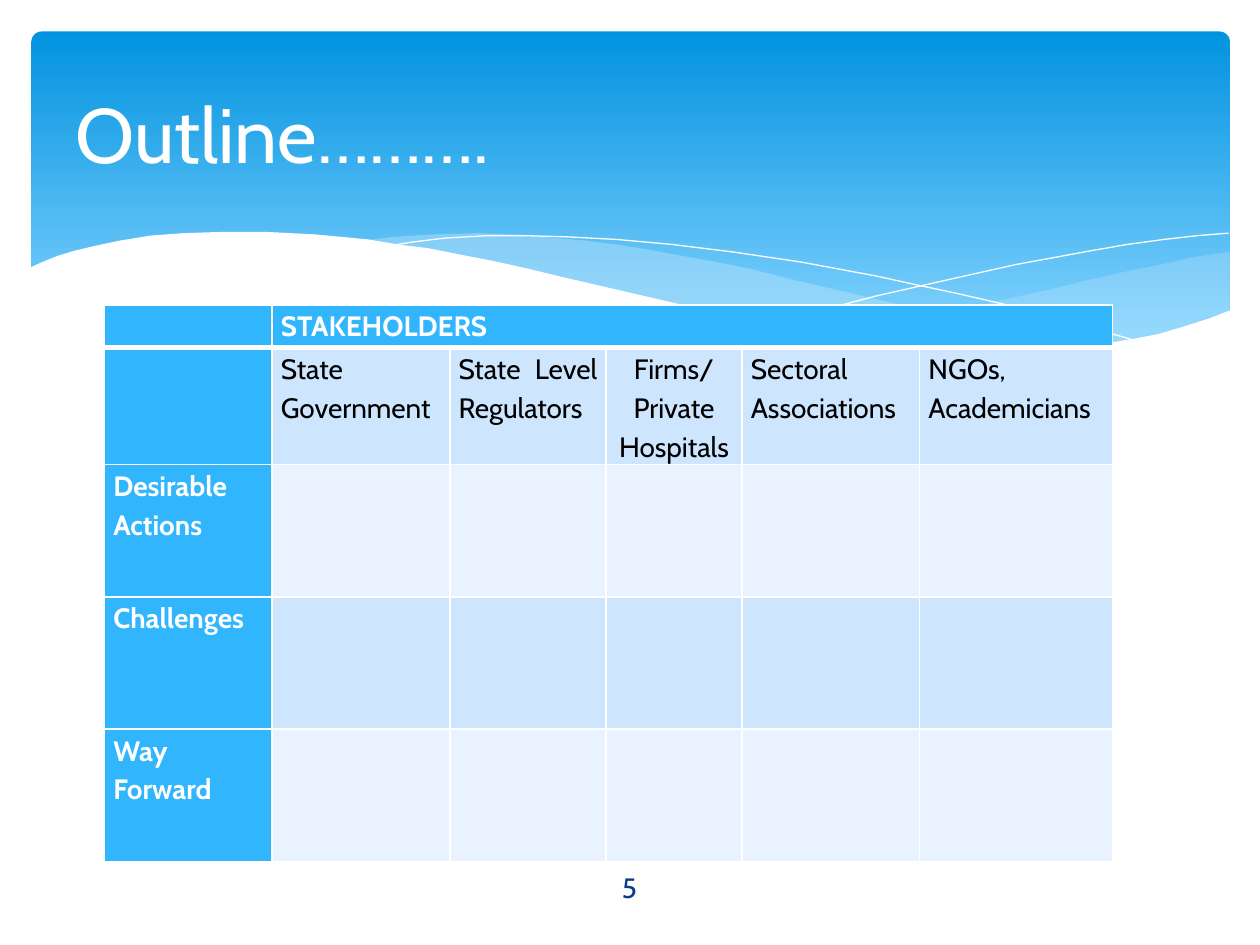
from lxml.etree import SubElement
from pptx import Presentation
from pptx.dml.color import RGBColor
from pptx.enum.shapes import MSO_SHAPE
from pptx.enum.text import MSO_ANCHOR, PP_ALIGN
from pptx.oxml.ns import qn
from pptx.util import Emu, Pt

PX = 9144  # EMU in one px, 100 px to the inch
WHITE, BLACK, NAVY = "FFFFFF", "000000", "073E87"
SKY, PALE, PALER, MIST = "31B6FD", "CEE5FE", "E8F3FF", "C6E7FC"
BANNER_TOP, BANNER_BOTTOM = "0293E0", "83D3FE"

RIGHT_SWELL = [
    (975, 200), (948, 204), (921, 210), (891, 216), (861, 223), (832, 230),
    (779, 242), (729, 253), (683, 262), (661, 265), (691, 269), (719, 272),
    (745, 275), (769, 277), (803, 278), (835, 277), (863, 275), (889, 272),
    (913, 267), (935, 262), (949, 257), (963, 252), (976, 247), (976, 200)]
MIDDLE_SWELL = [
    (893, 273), (866, 269), (837, 265), (807, 260), (775, 254), (741, 247),
    (706, 240), (668, 231), (629, 222), (598, 214), (569, 208), (541, 203),
    (514, 198), (489, 194), (465, 191), (442, 189), (420, 187), (399, 186),
    (380, 185), (344, 186), (313, 188), (286, 191), (323, 196), (362, 203),
    (404, 211), (449, 222), (491, 232), (530, 240), (566, 248), (601, 255),
    (634, 261), (665, 266), (695, 270), (722, 274), (748, 276), (785, 278),
    (828, 278), (857, 277), (876, 275)]
FALLING_LINE = [
    (309, 195), (328, 192), (353, 189), (387, 187), (416, 187), (450, 188),
    (489, 190), (533, 194), (582, 200), (636, 208), (695, 219), (727, 226),
    (760, 233), (795, 241), (831, 251), (869, 261), (907, 272)]
RISING_LINE = [
    (613, 257), (653, 246), (695, 235), (748, 223), (806, 210), (866, 199),
    (895, 194), (924, 190), (951, 187), (975, 185)]
WHITE_WAVE = [
    (977, 246), (959, 253), (940, 259), (920, 265), (899, 269), (875, 273),
    (850, 275), (823, 277), (793, 276), (761, 275), (726, 272), (688, 268),
    (648, 262), (603, 254), (555, 245), (503, 233), (447, 220), (418, 213),
    (391, 207), (365, 202), (340, 197), (316, 194), (292, 190), (271, 188),
    (250, 186), (230, 185), (211, 184), (177, 184), (146, 185), (119, 187),
    (95, 191), (76, 195), (59, 199), (46, 203), (36, 207), (29, 210),
    (23, 213), (23, 329), (977, 329)]

COLUMN_WIDTHS = [133, 141, 124, 108, 141, 153]
ROW_HEIGHTS = [34, 69, 105, 105, 105]
STAKEHOLDERS = ["State Government", "State Level Regulators",
                "Firms/Private Hospitals", "Sectoral Associations",
                "NGOs, Academicians"]
TOPICS = ["Desirable Actions", "Challenges", "Way Forward"]


def rgb(hex_colour):
    return RGBColor.from_string(hex_colour)


def px(length):
    return Emu(length * PX)


class SlideBuilder:
    font_name = "Cabin"
    body_size = 16

    def __init__(self, slide):
        self.slide = slide
        self.shapes = slide.shapes

    def style(self, paragraph, size, colour, bold=False, align=PP_ALIGN.LEFT):
        paragraph.alignment = align
        font = paragraph.font
        font.name, font.size, font.bold = self.font_name, Pt(size), bold
        font.color.rgb = rgb(colour)

    def banner(self, box, radius, top, bottom):
        """Rounded rectangle shaded from top to bottom."""
        panel = self.shapes.add_shape(MSO_SHAPE.ROUNDED_RECTANGLE, *map(px, box))
        panel.shadow.inherit = False
        panel.adjustments[0] = radius
        panel.line.fill.background()
        panel.fill.gradient()
        panel.fill.gradient_angle = 270
        for stop, position, colour in zip(
                panel.fill.gradient_stops, (0, 0.9), (top, bottom)):
            stop.position = position
            stop.color.rgb = rgb(colour)

    def outline(self, points, closed):
        builder = self.shapes.build_freeform(*points[0], scale=PX)
        builder.add_line_segments(points[1:], close=closed)
        shape = builder.convert_to_shape()
        shape.shadow.inherit = False
        return shape

    def wave(self, points, colour, opacity=100):
        shape = self.outline(points, closed=True)
        shape.line.fill.background()
        shape.fill.solid()
        shape.fill.fore_color.rgb = rgb(colour)
        if opacity < 100:
            tint = shape.fill._xPr.find(".//" + qn("a:srgbClr"))
            SubElement(tint, qn("a:alpha"), val=str(opacity * 1000))

    def curve(self, points, colour):
        """Open hairline."""
        shape = self.outline(points, closed=False)
        shape.fill.background()
        shape.line.color.rgb = rgb(colour)
        shape.line.width = Pt(0)

    def text(self, box, wording, size, colour, align=PP_ALIGN.LEFT):
        frame = self.shapes.add_textbox(*map(px, box)).text_frame
        frame.word_wrap = True
        frame.vertical_anchor = MSO_ANCHOR.MIDDLE
        frame.text = wording
        self.style(frame.paragraphs[0], size, colour, align=align)

    def table(self, left, top, widths, heights):
        table = self.shapes.add_table(
            len(heights), len(widths),
            *map(px, (left, top, sum(widths), sum(heights)))).table
        for column, width in zip(table.columns, widths):
            column.width = px(width)
        for row, height in zip(table.rows, heights):
            row.height = px(height)
        return table

    def cell(self, cell, wording, fill, colour, bold, align, rule_below, rule_above):
        cell.margin_left = cell.margin_right = px(7)
        cell.margin_top = cell.margin_bottom = 0
        cell.text = wording
        paragraph = cell.text_frame.paragraphs[0]
        self.style(paragraph, self.body_size, colour, bold, align)
        paragraph.line_spacing = 1.15
        properties = cell._tc.get_or_add_tcPr()
        for side, points in zip("LRTB", (1, 1, rule_above, rule_below)):
            border = SubElement(properties, qn("a:ln" + side), w=str(Pt(points)))
            paint = SubElement(border, qn("a:solidFill"))
            SubElement(paint, qn("a:srgbClr"), val=WHITE)
        cell.fill.solid()
        cell.fill.fore_color.rgb = rgb(fill)


def add_stakeholder_table(builder):
    table = builder.table(83, 242, COLUMN_WIDTHS, ROW_HEIGHTS)
    blanks = [""] * len(STAKEHOLDERS)
    rows = [["", "STAKEHOLDERS"] + blanks[1:], [""] + STAKEHOLDERS]
    rows += [[topic] + blanks for topic in TOPICS]
    for r, row in enumerate(rows):
        for c, wording in enumerate(row):
            heading = r == 0 or c == 0
            band = PALE if r % 2 else PALER
            centred = wording.startswith("Firms")
            builder.cell(
                table.cell(r, c), wording,
                fill=SKY if heading else band,
                colour=WHITE if heading else BLACK,
                bold=heading,
                align=PP_ALIGN.CENTER if centred else PP_ALIGN.JUSTIFY,
                rule_below=3 if r == 0 else 1,
                rule_above=3 if r == 1 else 1)
    table.cell(0, 1).merge(table.cell(0, len(STAKEHOLDERS)))


def main():
    presentation = Presentation()
    presentation.slide_width, presentation.slide_height = px(1000), px(750)
    builder = SlideBuilder(
        presentation.slides.add_slide(presentation.slide_layouts[6]))
    builder.banner((25, 25, 951, 270), 0.03, BANNER_TOP, BANNER_BOTTOM)
    builder.wave(RIGHT_SWELL, MIST, opacity=29)
    builder.wave(MIDDLE_SWELL, MIST, opacity=40)
    builder.curve(FALLING_LINE, WHITE)
    builder.curve(RISING_LINE, WHITE)
    builder.wave(WHITE_WAVE, WHITE)
    add_stakeholder_table(builder)
    builder.text((50, 37, 900, 137), "Outline……….", 44, WHITE)
    builder.text((436, 684, 127, 40), "5", builder.body_size, NAVY, PP_ALIGN.CENTER)
    presentation.save("out.pptx")


if __name__ == "__main__":
    main()
